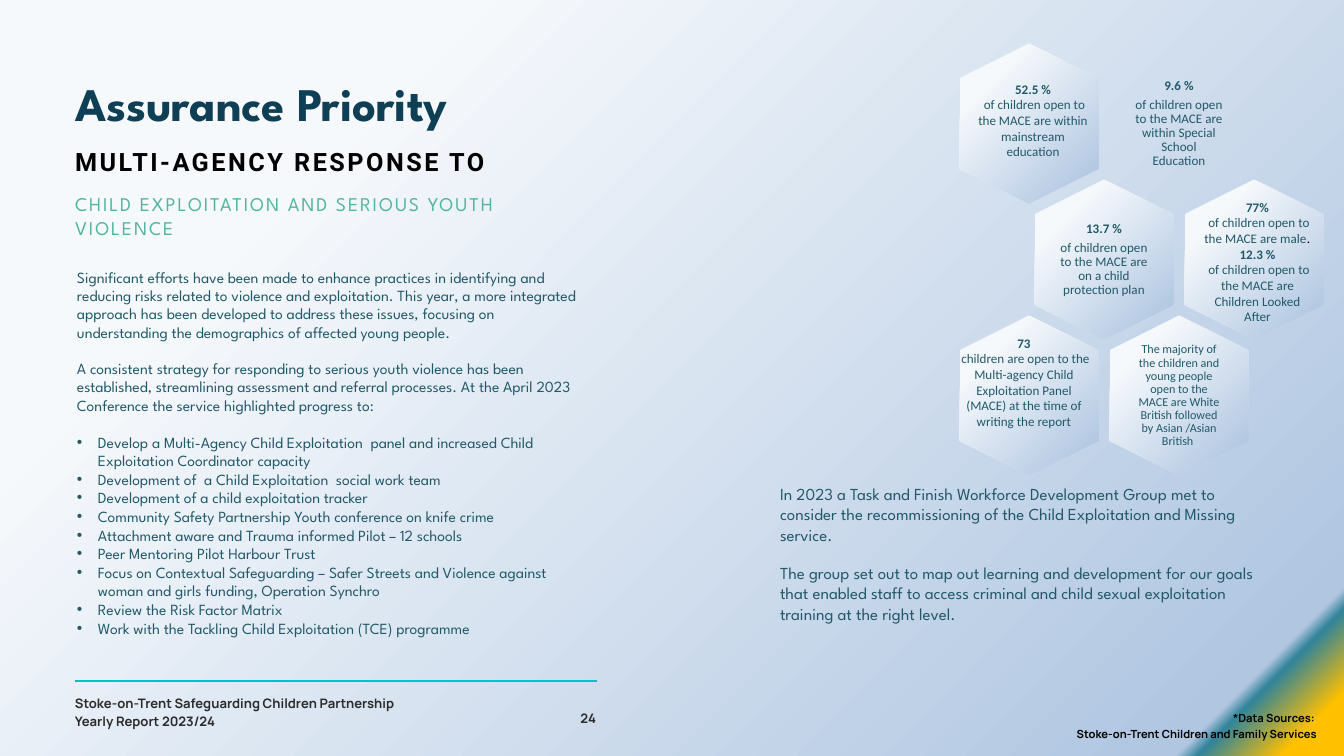
from typing import NamedTuple

import pptx
import pptx.dml.color
import pptx.enum.shapes
import pptx.enum.text
import pptx.oxml
import pptx.oxml.ns
import pptx.util
from lxml import etree

EMU_PER_PX = 20 * 914400 / 1344
SPARTAN, CALIBRI, MANROPE, ROBOTO = "League Spartan", "Calibri", "Manrope", "Roboto"
TEAL, NAVY, GREEN, CYAN = "215968", "0E3F54", "51B59F", "00C2CB"
CHARCOAL, BLACK = "2B2B2B", "000000"
STOPS = [(3, "FFC000"), (7, "31859C"), (8, "B0C6E1"), (78, "F6F9FC")]
ALIGN = pptx.enum.text.PP_ALIGN
ANCHOR = pptx.enum.text.MSO_ANCHOR
FIT = pptx.enum.text.MSO_AUTO_SIZE
SHAPES = pptx.enum.shapes.MSO_SHAPE


class Cell(NamedTuple):
    """Place in the honeycomb, in half columns and rows."""
    column: int
    row: int

    @property
    def left(self) -> int:
        return 949 + 75 * self.column

    @property
    def top(self) -> int:
        return 54 + 136 * self.row


class GridLabel(NamedTuple):
    cell: Cell
    figure: str
    text: str
    size: int


class FreeLabel(NamedTuple):
    box: tuple[int, int, int, int]
    figure: str
    text: str


HEXAGONS = [Cell(0, 0), Cell(1, 1), Cell(3, 1), Cell(2, 2), Cell(0, 2)]
GRID_LABELS = [
    GridLabel(Cell(2, 0), "9.6 %", "of children open to the MACE are within Special School Education", 14),
    GridLabel(Cell(1, 1), "13.7 %", "of children open to the MACE are on a child protection plan", 14),
    GridLabel(Cell(2, 2), "", "The majority of the children and young people open to the MACE "
              "are White British followed by Asian /Asian British ", 13),
]
FREE_LABELS = [
    FreeLabel((958, 335, 132, 96), "73", " children are open to the Multi-agency Child Exploitation Panel "
              "(MACE) at the time of writing the report"),
    FreeLabel((1200, 199, 115, 128), "77%", " of children open to the MACE are male"),
    FreeLabel((976, 81, 114, 64), "52.5 %", " of children open to the MACE are within mainstream education"),
]
INTRO = [
    "Significant efforts have been made to enhance practices in identifying and reducing risks related to "
    "violence and exploitation. This year, a more integrated approach has been developed to address these "
    "issues, focusing on understanding the demographics of affected young people.",
    "A consistent strategy for responding to serious youth violence has been established, streamlining "
    "assessment and referral processes. At the April 2023 Conference the service highlighted progress to:",
]
ACTIONS = [
    "Develop a Multi-Agency Child Exploitation  panel and increased Child Exploitation Coordinator capacity",
    "Development of  a Child Exploitation  social work team",
    "Development of a child exploitation tracker",
    "Community Safety Partnership Youth conference on knife crime",
    "Attachment aware and Trauma informed Pilot – 12 schools",
    "Peer Mentoring Pilot Harbour Trust",
    "Focus on Contextual Safeguarding – Safer Streets and Violence against woman and girls funding, "
    "Operation Synchro",
    "Review the Risk Factor Matrix",
    "Work with the Tackling Child Exploitation (TCE) programme",
]
WORKFORCE = [
    "In 2023 a Task and Finish Workforce Development Group met to consider the recommissioning of the Child "
    "Exploitation and Missing service.",
    "The group set out to map out learning and development for our goals that enabled staff to access "
    "criminal and child sexual exploitation training at the right level.",
]


def px(length: float) -> int:
    return round(length * EMU_PER_PX)


def rgb(color: str):
    return pptx.dml.color.RGBColor.from_string(color)


def paint_gradient(fill, owner) -> None:
    """Give a fill the shared gradient that spreads from the bottom right corner."""
    fill.solid()
    solid = owner.find(".//" + pptx.oxml.ns.qn("a:solidFill"))
    stops = "".join(f'<a:gs pos="{at * 1000}"><a:srgbClr val="{color}"/></a:gs>' for at, color in STOPS)
    gradient = pptx.oxml.parse_xml(
        f'<a:gradFill {pptx.oxml.ns.nsdecls("a")} rotWithShape="1"><a:gsLst>{stops}</a:gsLst>'
        '<a:path path="circle"><a:fillToRect l="100000" t="100000"/></a:path>'
        '<a:tileRect r="-100000" b="-100000"/></a:gradFill>')
    solid.getparent().replace(solid, gradient)


def place(box, left: int, top: int, width: int, height: int) -> None:
    box.left, box.top, box.width, box.height = px(left), px(top), px(width), px(height)


def format_frame(frame, margin: tuple[int, int] = (0, 0), anchor=ANCHOR.TOP, fit=FIT.SHAPE_TO_FIT_TEXT):
    frame.word_wrap = True
    frame.auto_size = fit
    frame.vertical_anchor = anchor
    frame.margin_left = frame.margin_right = px(margin[0])
    frame.margin_top = frame.margin_bottom = px(margin[1])
    return frame


def add_box(slide, left: int, top: int, width: int, height: int, **layout):
    box = slide.shapes.add_textbox(px(left), px(top), px(width), px(height))
    return format_frame(box.text_frame, **layout)


def add_span(para, text: str, size: float = 14, font: str = CALIBRI, color: str = TEAL,
             bold: bool = False, tracking: int = 0) -> None:
    span = para.add_run()
    span.text = text
    span.font.size = pptx.util.Pt(size)
    span.font.name = font
    span.font.bold = bold
    span.font.color.rgb = rgb(color)
    if tracking:
        span.font._element.set("spc", str(tracking))


def add_para(frame, text: str, align=ALIGN.LEFT, line: float = 1.0, before: float = 0,
             after: float = 0, bullet: bool = False, **style):
    """Write a paragraph; line is a multiple when below 2, otherwise points."""
    first = frame.paragraphs[0]
    para = frame.add_paragraph() if first.runs else first
    properties = para._p.get_or_add_pPr()
    indent = px(21) if bullet else 0
    properties.set("marL", str(indent))
    properties.set("indent", str(-indent))
    if bullet:
        etree.SubElement(properties, pptx.oxml.ns.qn("a:buFont")).set("typeface", "Arial")
        etree.SubElement(properties, pptx.oxml.ns.qn("a:buChar")).set("char", "•")
    else:
        etree.SubElement(properties, pptx.oxml.ns.qn("a:buNone"))
    para.alignment = align
    para.line_spacing = line if line < 2 else pptx.util.Pt(line)
    para.space_before = pptx.util.Pt(before)
    para.space_after = pptx.util.Pt(after)
    add_span(para, text, **style)
    return para


def add_hexagon(slide, cell: Cell) -> None:
    hexagon = slide.shapes.add_shape(SHAPES.HEXAGON, px(cell.left), px(cell.top), px(160), px(139))
    hexagon.adjustments[0] = 0.25
    hexagon.rotation = 90
    hexagon.shadow.inherit = False
    paint_gradient(hexagon.fill, hexagon._element.spPr)
    hexagon.line.fill.background()


def main() -> None:
    deck = pptx.Presentation()
    deck.slide_width, deck.slide_height = px(1344), px(756)
    slide = deck.slides.add_slide(deck.slide_layouts[1])
    paint_gradient(slide.background.fill, slide._element)

    # Headings
    title, body = slide.placeholders
    place(title, 75, 75, 790, 56)
    add_para(format_frame(title.text_frame, fit=FIT.NONE), "Assurance Priority",
             line=60, size=50, font=SPARTAN, color=NAVY, bold=True)
    add_para(add_box(slide, 75, 145, 428, 32), "MULTI-AGENCY RESPONSE TO",
             line=33.8, size=27, font=ROBOTO, color=BLACK, bold=True, tracking=270)
    add_para(add_box(slide, 75, 191, 428, 47), "CHILD EXPLOITATION AND SERIOUS YOUTH VIOLENCE",
             line=25.9, size=20.8, font=SPARTAN, color=GREEN, tracking=210)

    # Introduction and list of actions
    place(body, 77, 268, 511, 395)
    frame = format_frame(body.text_frame, fit=FIT.NONE)
    for index, text in enumerate(INTRO):
        add_para(frame, text, line=19.6, before=19.6 if index else 0, size=16.6, font=SPARTAN)
    for index, text in enumerate(ACTIONS):
        add_para(frame, text, before=0 if index else 19.6, bullet=True, size=16.6, font=SPARTAN)

    # Honeycomb of figures
    for cell in HEXAGONS:
        add_hexagon(slide, cell)
    for label in GRID_LABELS:
        frame = add_box(slide, label.cell.left + 32, label.cell.top + 15, 96, 110,
                        margin=(4, 4), anchor=ANCHOR.MIDDLE, fit=FIT.NONE)
        if label.figure:
            add_para(frame, label.figure, align=ALIGN.CENTER, line=0.9, after=5, bold=True)
        add_para(frame, label.text, align=ALIGN.CENTER, line=0.9, after=5, size=label.size)
    for label in FREE_LABELS:
        frame = add_box(slide, *label.box)
        add_para(frame, label.figure, align=ALIGN.CENTER, line=16.8, bold=True)
        para = add_para(frame, label.text, align=ALIGN.CENTER, line=16.8)
        if label.figure == "77%":
            add_span(para, ".", font=SPARTAN, color=BLACK)
            add_span(para, " 12.3 %", bold=True)
            add_para(frame, " of children open to the MACE are Children Looked After",
                     align=ALIGN.CENTER, line=16.8)

    # Workforce development
    frame = add_box(slide, 773, 481, 499, 149, margin=(7, 3))
    for index, text in enumerate(WORKFORCE):
        add_para(frame, text, before=19.8 if index else 0, size=18, font=SPARTAN)

    # Footer
    rule = slide.shapes.add_connector(pptx.enum.shapes.MSO_CONNECTOR.STRAIGHT,
                                      px(75), px(681), px(597), px(681))
    rule.line.color.rgb = rgb(CYAN)
    rule.line.width = pptx.util.Pt(1.5)
    etree.SubElement(rule._element.spPr, pptx.oxml.ns.qn("a:effectLst"))
    footer = {"font": MANROPE, "bold": True}
    frame = add_box(slide, 75, 693, 368, 37)
    for text in ("Stoke-on-Trent Safeguarding Children Partnership", "Yearly Report 2023/24"):
        add_para(frame, text, line=19.6, color=CHARCOAL, **footer)
    add_para(add_box(slide, 519, 708, 77, 18), "24", align=ALIGN.RIGHT, line=19.6, color=CHARCOAL, **footer)
    frame = add_box(slide, 851, 709, 466, 31)
    for text in ("*Data Sources: ", "Stoke-on-Trent Children and Family Services"):
        add_para(frame, text, align=ALIGN.RIGHT, line=16.8, size=12, color=BLACK, **footer)

    deck.save("out.pptx")


if __name__ == "__main__":
    main()
